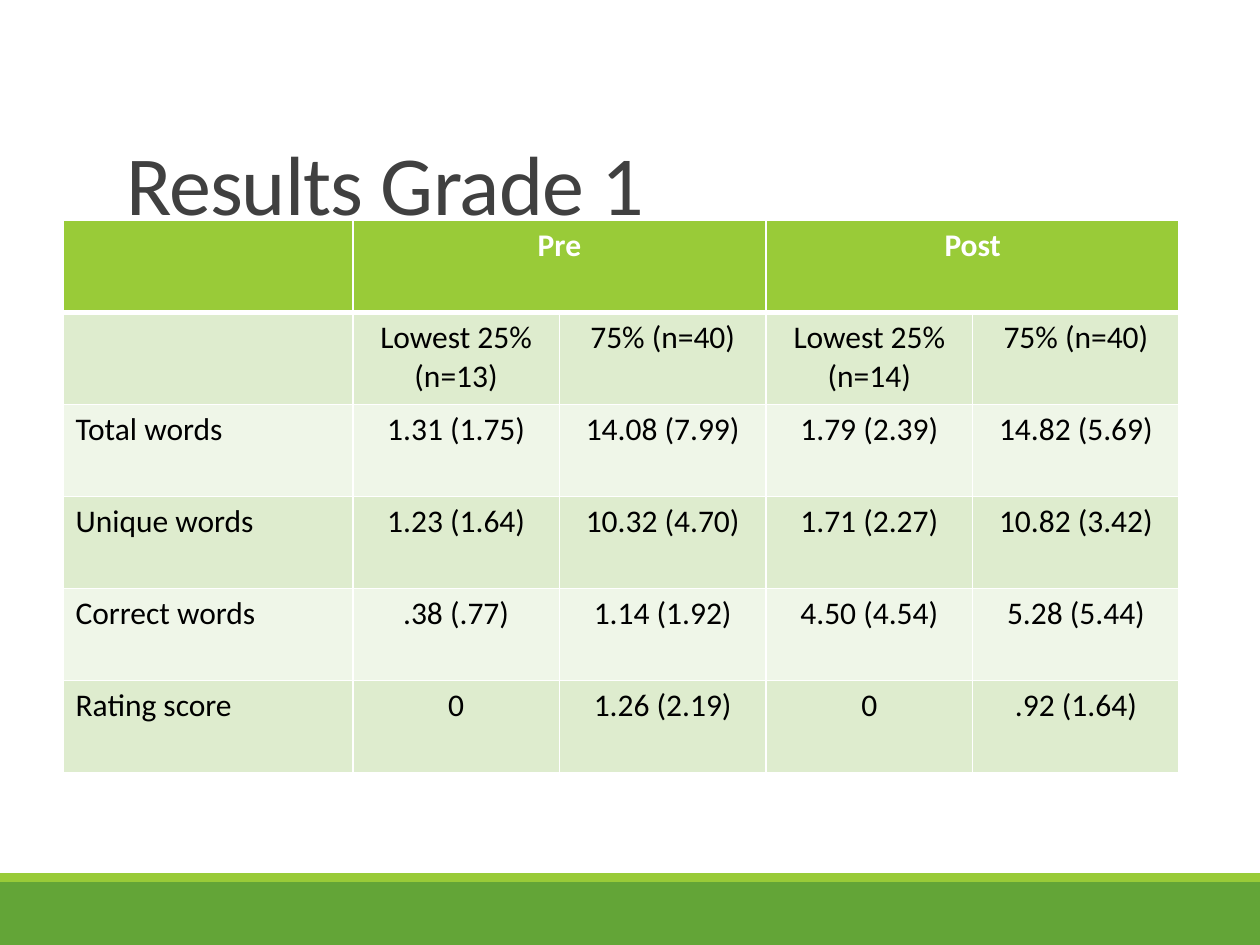
from pptx import Presentation
from pptx.dml.color import RGBColor
from pptx.enum.shapes import MSO_SHAPE
from pptx.enum.text import MSO_ANCHOR, MSO_AUTO_SIZE, PP_ALIGN
from pptx.oxml import parse_xml
from pptx.oxml.ns import nsdecls
from pptx.util import Inches, Pt

WHITE = RGBColor(0xFF, 0xFF, 0xFF)
BLACK = RGBColor(0x00, 0x00, 0x00)
GRAY = RGBColor(0x40, 0x40, 0x40)
GREEN = RGBColor(0x63, 0xA5, 0x37)
LIME = RGBColor(0x99, 0xCB, 0x38)
BAND_DARK = RGBColor(0xDE, 0xEC, 0xCE)
BAND_LIGHT = RGBColor(0xEF, 0xF6, 0xE8)

RESULTS = [
    ["", "Pre", "", "Post", ""],
    ["", "Lowest 25% (n=13)", "75% (n=40)", "Lowest 25% (n=14)", "75% (n=40)"],
    ["Total words", "1.31 (1.75)", "14.08 (7.99)", "1.79 (2.39)", "14.82 (5.69)"],
    ["Unique words", "1.23 (1.64)", "10.32 (4.70)", "1.71 (2.27)", "10.82 (3.42)"],
    ["Correct words", ".38 (.77)", "1.14 (1.92)", "4.50 (4.54)", "5.28 (5.44)"],
    ["Rating score", "0", "1.26 (2.19)", "0", ".92 (1.64)"],
]


class SlideBuilder:
    font = "Calibri"
    title_size = Pt(48)
    table_size = Pt(18)

    def __init__(self, slide):
        self.s = slide

    def style(self, p, size, color, bold=False):
        p.font.name = self.font
        p.font.size = size
        p.font.bold = bold
        p.font.color.rgb = color

    def bar(self, top, height, color):
        sp = self.s.shapes.add_shape(
            MSO_SHAPE.RECTANGLE, 0, Inches(top), Inches(10), Inches(height))
        sp.shadow.inherit = False
        sp.fill.solid()
        sp.fill.fore_color.rgb = color
        sp.line.fill.background()

    def title(self, text, left, top, width, height):
        sp = self.s.shapes.title
        sp.left, sp.top = Inches(left), Inches(top)
        sp.width, sp.height = Inches(width), Inches(height)
        tf = sp.text_frame
        tf.text = text
        tf.auto_size = MSO_AUTO_SIZE.NONE
        tf.vertical_anchor = MSO_ANCHOR.BOTTOM
        p = tf.paragraphs[0]
        p.alignment = PP_ALIGN.LEFT
        p.line_spacing = 0.85
        self.style(p, self.title_size, GRAY)
        p.runs[0].font._element.set("spc", "-50")

    def borders(self, cell, bottom):
        tc_pr = cell._tc.get_or_add_tcPr()
        widths = {"lnL": 1, "lnR": 1, "lnT": 1, "lnB": bottom}
        for i, (tag, width) in enumerate(widths.items()):
            tc_pr.insert(i, parse_xml(
                f'<a:{tag} {nsdecls("a")} w="{Pt(width)}"><a:solidFill>'
                f'<a:srgbClr val="{WHITE}"/></a:solidFill></a:{tag}>'))

    def cell(self, cell, text, row, col):
        header = row == 0
        cell.fill.solid()
        cell.fill.fore_color.rgb = (
            LIME if header else BAND_DARK if row % 2 else BAND_LIGHT)
        self.borders(cell, 3 if header else 1)
        cell.text = text
        p = cell.text_frame.paragraphs[0]
        p.alignment = PP_ALIGN.CENTER if col else PP_ALIGN.LEFT
        self.style(p, self.table_size, WHITE if header else BLACK, header)

    def table(self, rows, left, top, col_widths, row_height):
        table = self.s.shapes.add_table(
            len(rows), len(col_widths), Inches(left), Inches(top),
            Inches(sum(col_widths)), Inches(row_height * len(rows))).table
        for column, width in zip(table.columns, col_widths):
            column.width = Inches(width)
        for r, values in enumerate(rows):
            table.rows[r].height = Inches(row_height)
            for c, text in enumerate(values):
                self.cell(table.cell(r, c), text, r, c)
        # Each test heading spans its two groups
        for c in (1, 3):
            table.cell(0, c).merge(table.cell(0, c + 1))


def main():
    prs = Presentation()
    prs.slide_width, prs.slide_height = Inches(10), Inches(7.5)
    slide = SlideBuilder(prs.slides.add_slide(prs.slide_layouts[5]))

    # Footer bands
    slide.bar(7, 0.5, GREEN)
    slide.bar(6.93, 0.07, LIME)

    # Title and results table
    slide.title("Results Grade 1", 0.9, 0.31, 8.25, 1.59)
    slide.table(RESULTS, 0.5, 1.75, [2.3] + [1.64] * 4, 0.73)

    prs.save("out.pptx")


if __name__ == "__main__":
    main()
